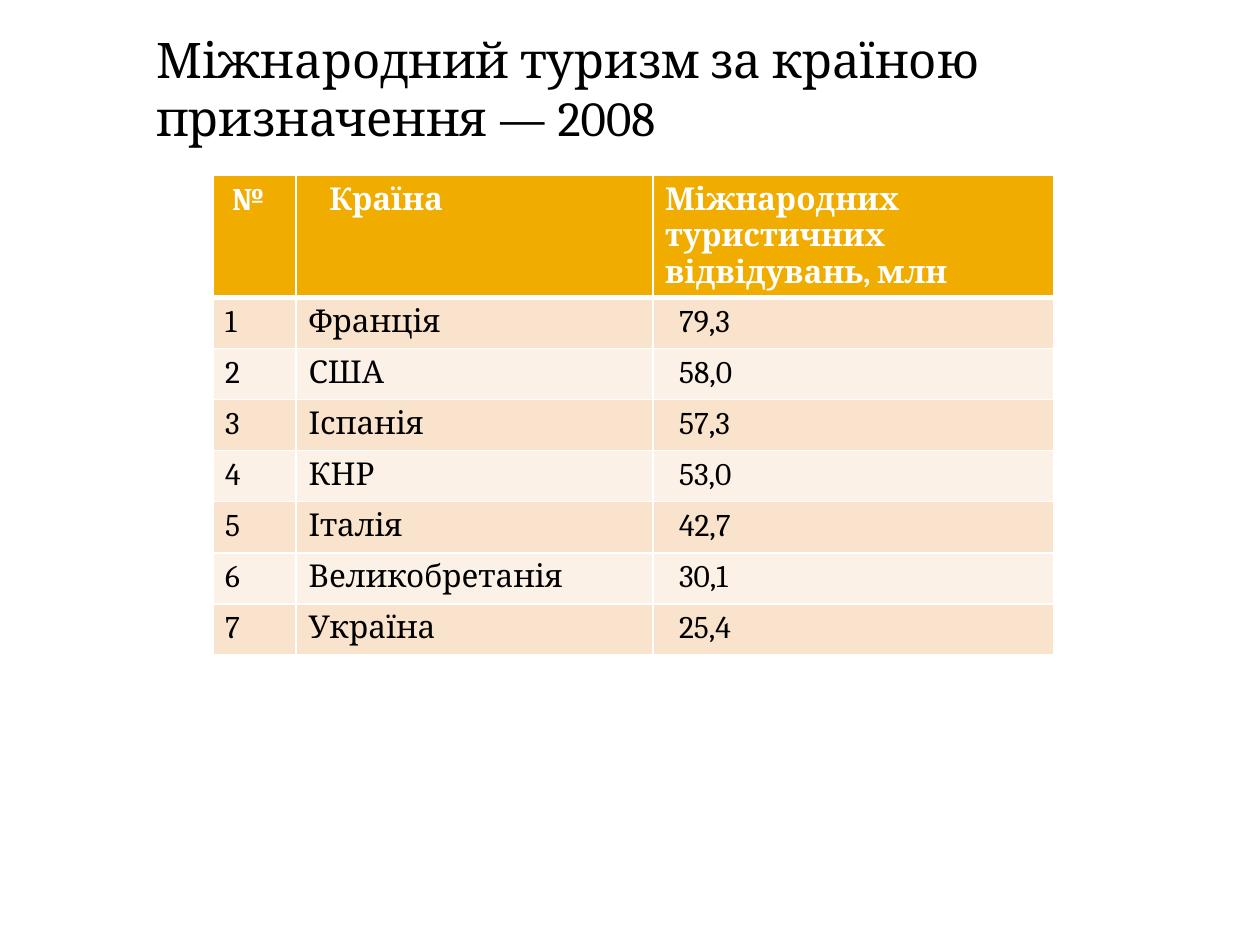
from lxml import etree
from pptx import Presentation
from pptx.dml.color import RGBColor
from pptx.enum.text import MSO_ANCHOR
from pptx.oxml.ns import qn
from pptx.util import Cm, Pt

BOTTOM = MSO_ANCHOR.BOTTOM
FONT = "Cambria"
BLACK = RGBColor(0x00, 0x00, 0x00)
WHITE = RGBColor(0xFF, 0xFF, 0xFF)
AMBER = RGBColor(0xF0, 0xAD, 0x00)
PEACH = RGBColor(0xF9, 0xE3, 0xCC)
CREAM = RGBColor(0xFC, 0xF1, 0xE7)

TITLE = "Міжнародний туризм за країною призначення — 2008"
HEADINGS = ["№", "Країна", "Міжнародних туристичних\nвідвідувань, млн"]
VISITS = [
    ("Франція", "79,3"),
    ("США", "58,0"),
    ("Іспанія", "57,3"),
    ("КНР", "53,0"),
    ("Італія", "42,7"),
    ("Великобретанія", "30,1"),
    ("Україна", "25,4"),
]
COLUMN_WIDTHS = [1.68, 7.19, 8.08]
HEADER_HEIGHT, ROW_HEIGHT = 2.43, 1.03
CELL_MARGIN = 0.25
HEADER_INDENTS = [0.14, 0.42, 0]
BODY_INDENTS = [0, 0, 0.28]


def add_run(paragraph, text, size, color, bold=False):
    run = paragraph.add_run()
    run.text = text
    run.font.name = FONT
    run.font.size = Pt(size)
    run.font.bold = bold
    run.font.color.rgb = color


def add_title(slide):
    title = slide.shapes.add_textbox(Cm(2.9), Cm(0), Cm(21.41), Cm(4.39))
    frame = title.text_frame
    frame.word_wrap = True
    frame.vertical_anchor = BOTTOM
    frame.margin_bottom = Cm(1.43)
    add_run(frame.paragraphs[0], TITLE, 28, BLACK)


def set_borders(cell, bottom_width):
    """Draw white lines round a cell, 1 pt except at the bottom."""
    properties = cell._tc.get_or_add_tcPr()
    widths = {"a:lnL": 1, "a:lnR": 1, "a:lnT": 1, "a:lnB": bottom_width}
    for side, width in widths.items():
        line = etree.SubElement(properties, qn(side), w=str(Pt(width)))
        fill = etree.SubElement(line, qn("a:solidFill"))
        etree.SubElement(fill, qn("a:srgbClr"), val=str(WHITE))


def fill_row(row, texts, indents, background, color, bold=False, bottom_width=1):
    for cell, text, indent in zip(row.cells, texts, indents):
        set_borders(cell, bottom_width)
        cell.fill.solid()
        cell.fill.fore_color.rgb = background
        cell.margin_left = Cm(CELL_MARGIN + indent)
        paragraph = cell.text_frame.paragraphs[0]
        for number, line in enumerate(text.split("\n")):
            if number:
                paragraph.add_line_break()
            add_run(paragraph, line, 18, color, bold)


def add_visits_table(slide):
    height = HEADER_HEIGHT + ROW_HEIGHT * len(VISITS)
    table = slide.shapes.add_table(
        len(VISITS) + 1, len(HEADINGS),
        Cm(4.29), Cm(3.54), Cm(sum(COLUMN_WIDTHS)), Cm(height),
    ).table
    for column, width in zip(table.columns, COLUMN_WIDTHS):
        column.width = Cm(width)

    header = table.rows[0]
    header.height = Cm(HEADER_HEIGHT)
    fill_row(header, HEADINGS, HEADER_INDENTS, AMBER, WHITE, True, 3)

    for rank, (country, visits) in enumerate(VISITS, start=1):
        row = table.rows[rank]
        row.height = Cm(ROW_HEIGHT)
        band = PEACH if rank % 2 else CREAM
        fill_row(row, [str(rank), country, visits], BODY_INDENTS, band, BLACK)


def main():
    presentation = Presentation()
    presentation.slide_width = Cm(25.4)
    presentation.slide_height = Cm(19.05)
    slide = presentation.slides.add_slide(presentation.slide_layouts[6])
    add_visits_table(slide)
    add_title(slide)
    presentation.save("out.pptx")


if __name__ == "__main__":
    main()
